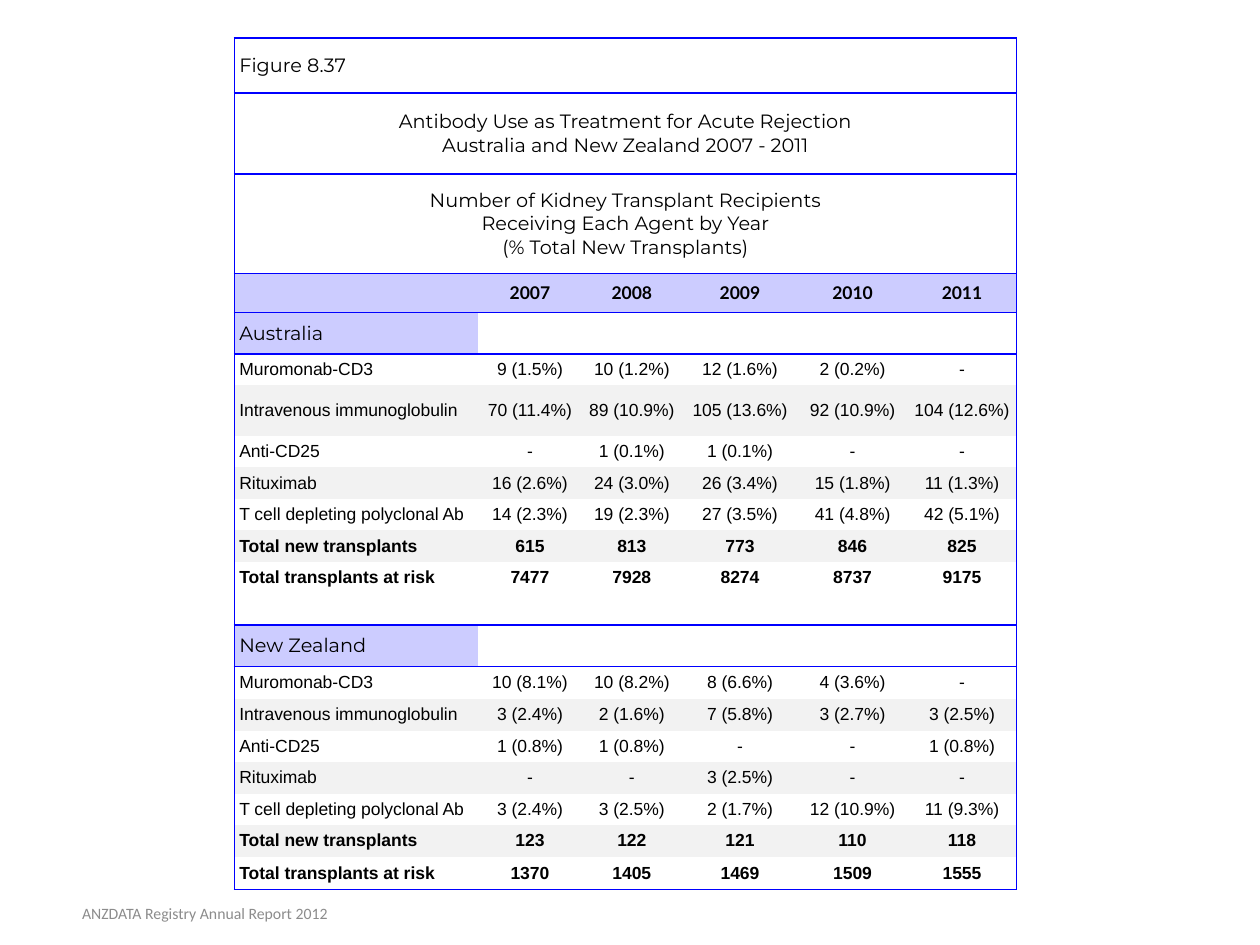
from lxml import etree
from pptx import Presentation
from pptx import util as u
from pptx.dml.color import RGBColor
from pptx.enum import text
from pptx.oxml import ns

BLUE = RGBColor(0x00, 0x00, 0xFF)
LAVENDER = RGBColor(0xCC, 0xCC, 0xFF)
STRIPE = RGBColor(0xF2, 0xF2, 0xF2)
BLACK = RGBColor(0x00, 0x00, 0x00)
GREY = RGBColor(0x8C, 0x8C, 0x8C)

NO_STYLE = "{2D5ABB26-0587-4C30-8999-92F81FD0307C}"
COLUMNS = [1.94, 0.82, 0.8, 0.92, 0.87, 0.87]
TITLE_HEIGHTS = [0.44, 0.64, 0.79]
YEAR_HEIGHT, COUNTRY_HEIGHT, ROW_HEIGHT = 0.31, 0.33, 0.25

TITLES = [
    "Figure 8.37",
    "Antibody Use as Treatment for Acute Rejection\n"
    "Australia and New Zealand 2007 - 2011",
    "Number of Kidney Transplant Recipients\n"
    "Receiving Each Agent by Year\n"
    "(% Total New Transplants)",
]
YEARS = ["2007", "2008", "2009", "2010", "2011"]
MEASURES = [
    "Muromonab-CD3", "Intravenous immunoglobulin", "Anti-CD25", "Rituximab",
    "T cell depleting polyclonal Ab", "Total new transplants",
    "Total transplants at risk",
]
COUNTRIES = {
    "Australia": [
        ["9 (1.5%)", "10 (1.2%)", "12 (1.6%)", "2 (0.2%)", "-"],
        ["70 (11.4%)", "89 (10.9%)", "105 (13.6%)", "92 (10.9%)", "104 (12.6%)"],
        ["-", "1 (0.1%)", "1 (0.1%)", "-", "-"],
        ["16 (2.6%)", "24 (3.0%)", "26 (3.4%)", "15 (1.8%)", "11 (1.3%)"],
        ["14 (2.3%)", "19 (2.3%)", "27 (3.5%)", "41 (4.8%)", "42 (5.1%)"],
        ["615", "813", "773", "846", "825"],
        ["7477", "7928", "8274", "8737", "9175"],
    ],
    "New Zealand": [
        ["10 (8.1%)", "10 (8.2%)", "8 (6.6%)", "4 (3.6%)", "-"],
        ["3 (2.4%)", "2 (1.6%)", "7 (5.8%)", "3 (2.7%)", "3 (2.5%)"],
        ["1 (0.8%)", "1 (0.8%)", "-", "-", "1 (0.8%)"],
        ["-", "-", "3 (2.5%)", "-", "-"],
        ["3 (2.4%)", "3 (2.5%)", "2 (1.7%)", "12 (10.9%)", "11 (9.3%)"],
        ["123", "122", "121", "110", "118"],
        ["1370", "1405", "1469", "1509", "1555"],
    ],
}
YEAR_ROW = len(TITLES)
COUNTRY_ROWS = [YEAR_ROW + 1, YEAR_ROW + 1 + len(MEASURES) + 2]
ROW_COUNT = COUNTRY_ROWS[-1] + 1 + len(MEASURES)
RULED_EDGES = {*range(YEAR_ROW + 2), COUNTRY_ROWS[-1], ROW_COUNT}


def row_heights():
    heights = [ROW_HEIGHT] * ROW_COUNT
    heights[:YEAR_ROW + 1] = TITLE_HEIGHTS + [YEAR_HEIGHT]
    for row in COUNTRY_ROWS:
        heights[row] = COUNTRY_HEIGHT
    heights[COUNTRY_ROWS[0] + 2] = 0.4
    heights[COUNTRY_ROWS[1] + 1] = heights[-1] = 0.26
    return heights


def style_paragraph(paragraph, size, name, color=BLACK, bold=False, centred=True):
    font = paragraph.font
    font.size, font.name, font.bold = u.Pt(size), name, bold
    font.color.rgb = color
    if centred:
        paragraph.alignment = text.PP_ALIGN.CENTER


def write_cell(cell, wording, size, name, bold=False, centred=True, after=None):
    cell.text = wording
    for paragraph in cell.text_frame.paragraphs:
        style_paragraph(paragraph, size, name, bold=bold, centred=centred)
        if after:
            paragraph.space_after = u.Pt(after)


def rule_cell(cell, sides):
    """Draw a blue line on the given sides, in the order L, R, T, B."""
    properties = cell._tc.get_or_add_tcPr()
    for side in sides:
        line = etree.SubElement(properties, ns.qn("a:ln" + side), w=str(u.Pt(1)))
        fill = etree.SubElement(line, ns.qn("a:solidFill"))
        etree.SubElement(fill, ns.qn("a:srgbClr"), val=str(BLUE))


def finish_cell(cell, row, column):
    """Set the margins, anchor, lines and fill that follow from the place."""
    cell.margin_left = cell.margin_right = u.Inches(0.04)
    cell.margin_top = cell.margin_bottom = u.Inches(0.04)
    cell.vertical_anchor = text.MSO_ANCHOR.MIDDLE
    last_column = column + (cell.span_width if cell.is_merge_origin else 1)
    sides = {
        "L": column == 0,
        "R": last_column == len(COLUMNS),
        "T": row in RULED_EDGES,
        "B": row + 1 in RULED_EDGES,
    }
    rule_cell(cell, [side for side, ruled in sides.items() if ruled])

    start = max((r for r in COUNTRY_ROWS if r < row), default=row)
    striped = row not in COUNTRY_ROWS and row - start in (2, 4, 6)
    if row == YEAR_ROW or (row in COUNTRY_ROWS and column == 0):
        color = LAVENDER
    else:
        color = STRIPE if striped else None
    if color is None:
        cell.fill.background()
    else:
        cell.fill.solid()
        cell.fill.fore_color.rgb = color
    if not cell.text:
        paragraph = cell.text_frame.paragraphs[0]._p
        etree.SubElement(paragraph, ns.qn("a:endParaRPr"), sz="1000")


def write_titles(table):
    last = len(COLUMNS) - 1
    table.cell(0, 0).merge(table.cell(0, 1))
    table.cell(0, 2).merge(table.cell(0, last))
    for row, title in enumerate(TITLES):
        if row:
            table.cell(row, 0).merge(table.cell(row, last))
        write_cell(table.cell(row, 0), title, 11, "Montserrat", centred=row > 0)


def write_country(table, top, country, figures):
    write_cell(table.cell(top, 0), country, 11, "Montserrat", centred=False)
    for row, (measure, values) in enumerate(zip(MEASURES, figures), top + 1):
        for column, value in enumerate([measure, *values]):
            write_cell(table.cell(row, column), value, 10, "Arial",
                       bold=measure.startswith("Total"),
                       centred=column > 0, after=14)


def add_antibody_table(slide, left, top, width, height):
    frame = slide.shapes.add_table(ROW_COUNT, len(COLUMNS), left, top, width, height)
    table = frame.table
    table.first_row = table.horz_banding = False
    table._tbl.tblPr.find(ns.qn("a:tableStyleId")).text = NO_STYLE
    for column, share in zip(table.columns, COLUMNS):
        column.width = int(width * share / sum(COLUMNS))
    heights = row_heights()
    for row, share in zip(table.rows, heights):
        row.height = int(height * share / sum(heights))

    write_titles(table)
    for column, year in enumerate(YEARS, 1):
        write_cell(table.cell(YEAR_ROW, column), year, 10, "Lato", bold=True)
    for top_row, (country, figures) in zip(COUNTRY_ROWS, COUNTRIES.items()):
        write_country(table, top_row, country, figures)
    for row in range(ROW_COUNT):
        for column in range(len(COLUMNS)):
            finish_cell(table.cell(row, column), row, column)


def add_footer(slide, left, top, width, height):
    frame = slide.shapes.add_textbox(left, top, width, height).text_frame
    frame.word_wrap = True
    frame.vertical_anchor = text.MSO_ANCHOR.MIDDLE
    frame.text = "ANZDATA Registry Annual Report 2012"
    style_paragraph(frame.paragraphs[0], 9, "Calibri", GREY)


def main():
    presentation = Presentation()
    presentation.slide_width, presentation.slide_height = u.Inches(10), u.Inches(7.5)
    slide = presentation.slides.add_slide(presentation.slide_layouts[6])
    add_antibody_table(slide, u.Inches(1.86), u.Inches(0.3),
                       u.Inches(6.21), u.Inches(6.76))
    add_footer(slide, u.Inches(0.04), u.Inches(7.05), u.Inches(3.17), u.Inches(0.4))
    presentation.save("out.pptx")


if __name__ == "__main__":
    main()
